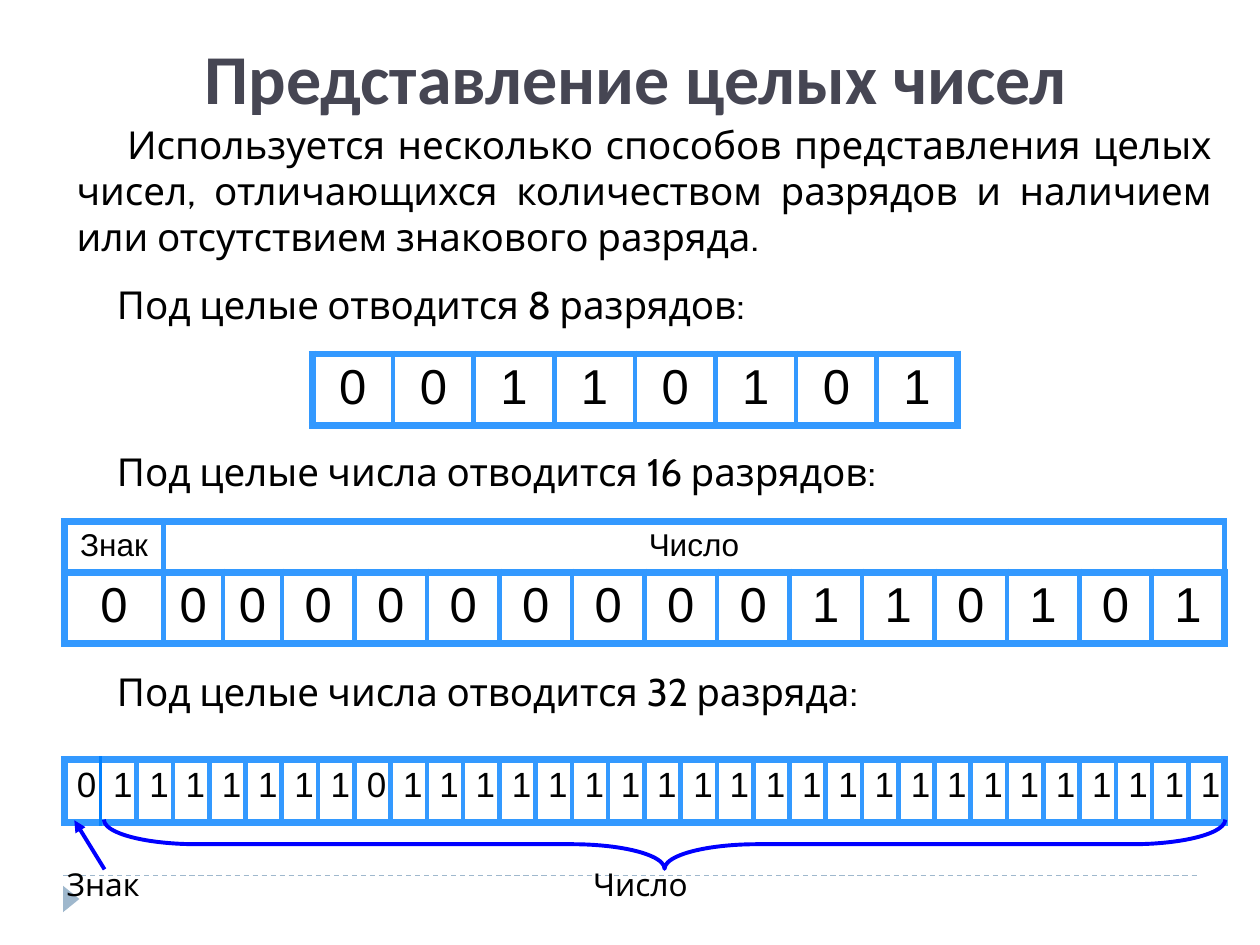
from pptx import Presentation
from pptx.dml.color import RGBColor
from pptx.enum.dml import MSO_LINE
from pptx.enum.shapes import MSO_CONNECTOR, MSO_SHAPE as SHAPE
from pptx.enum.text import MSO_ANCHOR as ANCHOR, PP_ALIGN as ALIGN
from pptx.oxml.ns import qn
from pptx.util import Inches, Pt
from lxml.etree import SubElement as Sub

GRID, SPLIT, MARK, PALE = "3399FF", "0180FF", "0000FF", "9FB8CD"
THICK, THIN = (GRID, 4.5), (GRID, 3)


def color(code):
    return RGBColor.from_string(code)


def write(frame, text, size=22, font="Cabin", ink="000000", bold=False,
          align=ALIGN.LEFT, indent=0):
    para = frame.paragraphs[0]
    para.alignment = align
    if indent:
        para._p.get_or_add_pPr().set("indent", str(Inches(indent)))
    run = para.add_run()
    run.text = text
    run.font.size = Pt(size)
    run.font.name = font
    run.font.bold = bold
    run.font.color.rgb = color(ink)


def edge(cell, side, style):
    """Draw one border of a cell; side is L, R, T or B."""
    code, width = style
    props = cell._tc.get_or_add_tcPr()
    line = Sub(props, qn("a:ln" + side), w=str(Pt(width)))
    fill = Sub(line, qn("a:solidFill"))
    Sub(fill, qn("a:srgbClr"), val=code)


class Board:
    def __init__(self, slide):
        self.slide = slide
        self.shapes = slide.shapes

    def text(self, box, text, anchor=ANCHOR.TOP, **style):
        frame = self.shapes.add_textbox(*map(Inches, box)).text_frame
        frame.word_wrap = True
        frame.vertical_anchor = anchor
        write(frame, text, **style)

    def shape(self, kind, box, turn, fill=None, line=None):
        shape = self.shapes.add_shape(kind, *map(Inches, box))
        shape.shadow.inherit = False
        shape.rotation = turn
        if fill:
            shape.fill.solid()
            shape.fill.fore_color.rgb = color(fill)
        else:
            shape.fill.background()
        if line:
            shape.line.color.rgb = color(line)
            shape.line.width = Pt(2.25)
        else:
            shape.line.fill.background()
        return shape

    def line(self, start, end, ink, width, dash=None, arrow=False):
        link = self.shapes.add_connector(
            MSO_CONNECTOR.STRAIGHT, *map(Inches, start + end))
        link.line.color.rgb = color(ink)
        link.line.width = Pt(width)
        if dash:
            link.line.dash_style = dash
        if arrow:
            Sub(link.line._get_or_add_ln(), qn("a:tailEnd"), type="triangle")
        Sub(link._element.spPr, qn("a:effectLst"))

    def table(self, left, top, cols, rows, data, sizes, align=ALIGN.CENTER,
              split=THIN, merge=False):
        """Draw a bit grid; split is the border after the first column."""
        last = len(cols) - 1
        box = map(Inches, (left, top, sum(cols), sum(rows)))
        grid = self.shapes.add_table(len(rows), len(cols), *box).table
        grid.first_row = grid.horz_banding = False
        for col, width in zip(grid.columns, cols):
            col.width = Inches(width)
        for row, height in zip(grid.rows, rows):
            row.height = Inches(height)
        if merge:
            grid.cell(0, 1).merge(grid.cell(0, last))
        sides = [THICK, split] + [THIN] * (last - 1) + [THICK]
        for r, (words, size) in enumerate(zip(data, sizes)):
            for c in range(last + 1):
                cell = grid.cell(r, c)
                for side, style in zip("LRTB", (sides[c], sides[c + 1],
                                                THICK, THICK)):
                    edge(cell, side, style)
                cell.fill.background()
                if c < len(words):
                    write(cell.text_frame, words[c], size=size, font="Arial",
                          align=align)


def main():
    deck = Presentation()
    deck.slide_width, deck.slide_height = Inches(10), Inches(7.5)
    board = Board(deck.slides.add_slide(deck.slide_layouts[6]))

    board.line((0.5, 6.95), (9.5, 6.95), PALE, 0.75, dash=MSO_LINE.DASH)
    board.shape(SHAPE.ISOSCELES_TRIANGLE, (0.46, 7.07, 0.21, 0.13), 90,
                fill=PALE)

    body = dict(align=ALIGN.JUSTIFY, indent=0.4)
    board.text((0.51, 0.91, 9.21, 1.2),
               "Используется несколько способов представления целых чисел, "
               "отличающихся количеством разрядов и наличием или "
               "отсутствием знакового разряда.", **body)
    board.text((0.59, 0.21, 8.91, 0.79), "Представление целых чисел",
               anchor=ANCHOR.MIDDLE, size=40, font="Calibri", ink="464653",
               bold=True, align=ALIGN.CENTER)
    for top, text in ((2.18, "Под целые отводится 8 разрядов:"),
                      (3.51, "Под целые числа отводится 16 разрядов:"),
                      (5.25, "Под целые числа отводится 32 разряда:")):
        board.text((0.43, top, 9.29, 0.47), text, **body)

    board.table(2.48, 2.81, [0.64] * 8, [0.57], ["00110101"], [28])
    board.table(0.51, 4.14, [0.79, 0.47, 0.47] + [7.48 / 13] * 13,
                [0.4, 0.57], [["Знак", "Число"], "0000000000110101"],
                [18, 28], merge=True)
    board.table(0.51, 6.03, [9.21 / 32] * 32, [0.5],
                ["0" + "1" * 7 + "0" + "1" * 23], [20], align=ALIGN.LEFT,
                split=(SPLIT, 2.25))

    board.text((0.43, 6.82, 1.18, 0.4), "Знак", size=18)
    brace = board.shape(SHAPE.LEFT_BRACE, (5.08, 2.25, 0.39, 8.9), 270,
                        line=MARK)
    brace.adjustments[0] = 1.89
    board.text((4.61, 6.82, 1.18, 0.4), "Число", size=18)
    board.line((0.83, 6.9), (0.59, 6.51), MARK, 2.25, arrow=True)

    deck.save("out.pptx")


if __name__ == "__main__":
    main()
